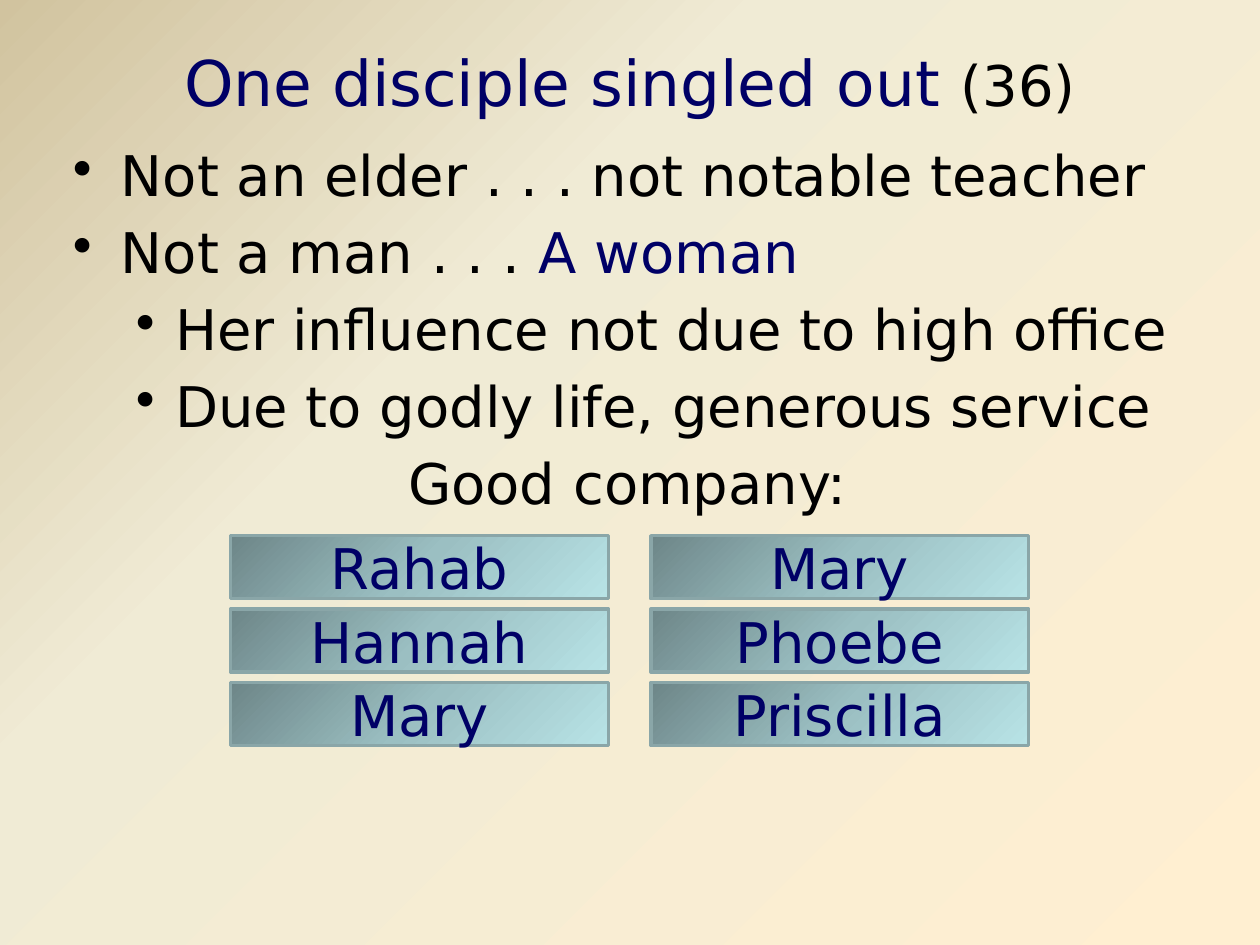
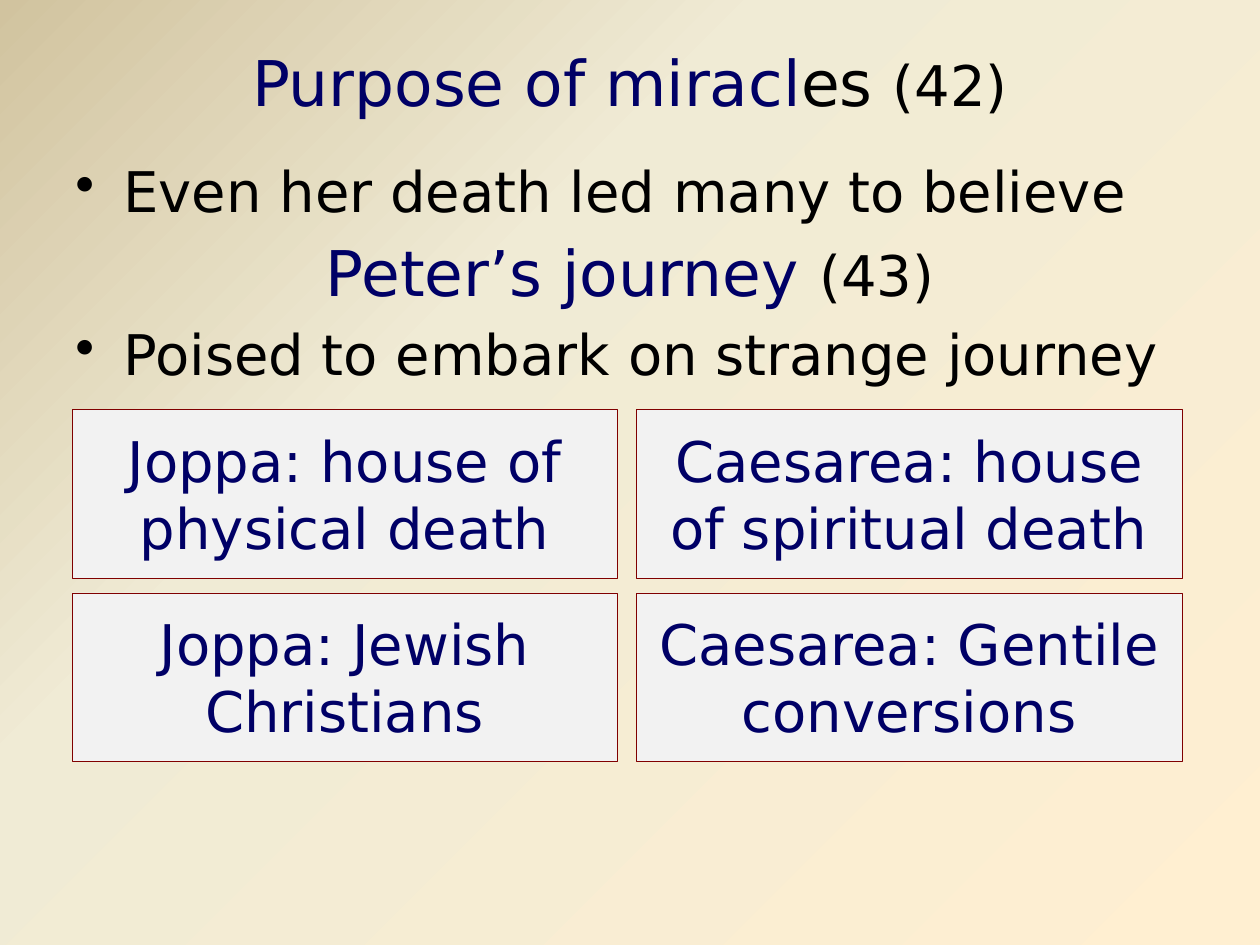
from lxml import etree
from pptx import Presentation
from pptx.dml.color import RGBColor
from pptx.enum.shapes import MSO_SHAPE
from pptx.enum.text import MSO_ANCHOR, PP_ALIGN
from pptx.oxml.ns import qn
from pptx.util import Cm, Pt

RECTANGLE = MSO_SHAPE.RECTANGLE
MIDDLE = MSO_ANCHOR.MIDDLE
TOP = MSO_ANCHOR.TOP
CENTER = PP_ALIGN.CENTER
LEFT = PP_ALIGN.LEFT

FONT = "DejaVu Sans"
HEADING_SIZE = 36
TEXT_SIZE = 32
COLORS = {
    "navy": "000066",
    "black": "000000",
    "teal_line": "8AA6A8",
    "card": "F2F2F2",
    "maroon": "800000",
}
SAND = [(0, "D1C39F"), (35, "F0EBD5"), (100, "FFEFD1")]
TEAL = [(0, "6D8688"), (50, "9BBFC2"), (100, "B8E3E6")]
INDENTS = [(0.97, 0.97), (2.06, 0.79)]


def color(name):
    return RGBColor.from_string(COLORS[name])


class SlideBuilder:
    def __init__(self):
        self.deck = Presentation()
        self.deck.slide_width = Cm(25.4)
        self.deck.slide_height = Cm(19.05)
        self.page = None

    def new_page(self):
        self.page = self.deck.slides.add_slide(self.deck.slide_layouts[6])
        self.gradient(self.page.background.fill, self.page, SAND)

    def gradient(self, fill, owner, stops):
        fill.gradient()
        fill.gradient_angle = 315
        stop_list = owner._element.find(".//" + qn("a:gsLst"))
        for stop in list(stop_list):
            stop_list.remove(stop)
        for percent, value in stops:
            stop = etree.SubElement(stop_list, qn("a:gs"), pos=str(percent * 1000))
            etree.SubElement(stop, qn("a:srgbClr"), val=value)

    def text_box(self, left, top, width, height, anchor):
        box = self.page.shapes.add_textbox(Cm(left), Cm(top), Cm(width), Cm(height))
        frame = box.text_frame
        frame.word_wrap = True
        frame.vertical_anchor = anchor
        return frame

    def add_spans(self, paragraph, spans, align=CENTER):
        paragraph.alignment = align
        paragraph.font.name = FONT
        for text, name, size in spans:
            span = paragraph.add_run()
            span.text = text
            span.font.size = Pt(size)
            span.font.color.rgb = color(name)

    def title(self, *spans):
        frame = self.text_box(1.27, 0.43, 22.86, 2.41, MIDDLE)
        self.add_spans(frame.paragraphs[0], spans)

    def body(self, left, top, height, lines):
        frame = self.text_box(left, top, 22.86, height, TOP)
        for index, (level, spans) in enumerate(lines):
            paragraph = frame.add_paragraph() if index else frame.paragraphs[0]
            self.add_spans(paragraph, spans, CENTER if level is None else LEFT)
            paragraph.line_spacing = 0.9
            paragraph.space_before = Pt(round(spans[0][2] * 0.23, 1))
            paragraph.space_after = Pt(2)
            if level is not None:
                self.bullet(paragraph, level)

    def bullet(self, paragraph, level):
        paragraph.level = level
        margin, hanging = INDENTS[level]
        properties = paragraph._p.get_or_add_pPr()
        properties.set("marL", str(Cm(margin)))
        properties.set("indent", str(-Cm(hanging)))
        mark = etree.Element(qn("a:buChar"), char="•")
        properties.find(qn("a:spcAft")).addnext(mark)

    def card(self, left, top, width, height, text, fill, line, line_width):
        box = self.page.shapes.add_shape(
            RECTANGLE, Cm(left), Cm(top), Cm(width), Cm(height))
        box.shadow.inherit = False
        if isinstance(fill, list):
            self.gradient(box.fill, box, fill)
        else:
            box.fill.solid()
            box.fill.fore_color.rgb = color(fill)
        box.line.color.rgb = color(line)
        box.line.width = Pt(line_width)
        box.text_frame.word_wrap = True
        box.text_frame.vertical_anchor = MIDDLE
        self.add_spans(box.text_frame.paragraphs[0], [(text, "navy", TEXT_SIZE)])

    def card_grid(self, origin, size, gap, rows, fill, line, line_width):
        for row, texts in enumerate(rows):
            for column, text in enumerate(texts):
                left = origin[0] + column * (size[0] + gap[0])
                top = origin[1] + row * (size[1] + gap[1])
                self.card(left, top, *size, text, fill, line, line_width)


def heading(text):
    return text, "navy", HEADING_SIZE


def plain(text):
    return text, "black", TEXT_SIZE


def disciple_slide(builder):
    builder.new_page()
    builder.title(heading("One disciple singled out "), plain("(36)"))
    builder.body(1.22, 2.87, 14.4, [
        (0, [plain("Not an elder . . . not notable teacher")]),
        (0, [plain("Not a man . . . "), ("A woman", "navy", TEXT_SIZE)]),
        (1, [plain("Her influence not due to high office")]),
        (1, [plain("Due to godly life, generous service")]),
        (None, [plain("Good company:")]),
    ])
    women = [("Rahab", "Mary"), ("Hannah", "Phoebe"), ("Mary", "Priscilla")]
    builder.card_grid((4.65, 10.8), (7.62, 1.27), (0.85, 0.21), women,
                      TEAL, "teal_line", 2)


def miracles_slide(builder):
    builder.new_page()
    builder.title(heading("Purpose of miracl"),
                  ("es ", "black", HEADING_SIZE), plain("(42)"))
    builder.body(1.27, 3.18, 13.41, [
        (0, [plain("Even her death led many to believe")]),
        (None, [heading("Peter’s journey "), plain("(43)")]),
        (0, [plain("Poised to embark on strange journey")]),
    ])
    cities = [
        ("Joppa: house of physical death", "Caesarea: house of spiritual death"),
        ("Joppa: Jewish Christians", "Caesarea: Gentile conversions"),
    ]
    builder.card_grid((1.45, 8.26), (11, 3.39), (0.38, 0.3), cities,
                      "card", "maroon", 0.25)


def main():
    builder = SlideBuilder()
    disciple_slide(builder)
    miracles_slide(builder)
    builder.deck.save("out.pptx")


if __name__ == "__main__":
    main()
